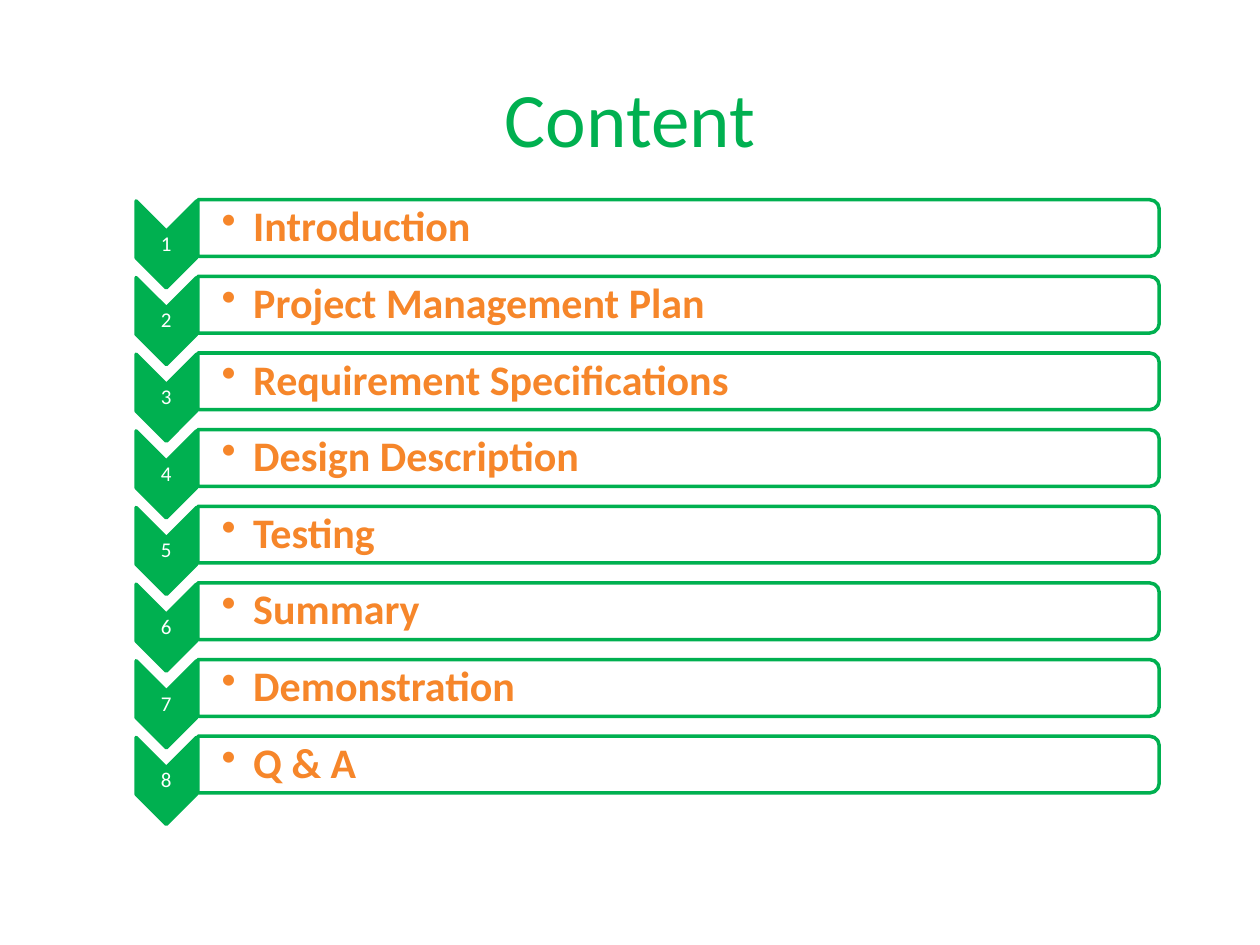
from lxml.etree import SubElement
from pptx import Presentation
from pptx.dml.color import RGBColor
from pptx.enum.shapes import MSO_SHAPE as Shape
from pptx.enum.text import MSO_ANCHOR as Anchor, PP_ALIGN as Align
from pptx.oxml.ns import qn
from pptx.util import Inches, Pt

# Content
TITLE = "Content"
TOPICS = [
    "Introduction",
    "Project Management Plan",
    "Requirement Specifications",
    "Design Description",
    "Testing",
    "Summary",
    "Demonstration",
    "Q & A",
]

GREEN = RGBColor(0x00, 0xB0, 0x50)
ORANGE = RGBColor(0xF6, 0x86, 0x2A)
WHITE = RGBColor(0xFF, 0xFF, 0xFF)
FONT = "Calibri"

# Grid, in inches: one row per topic, chevron column then bar column
SLIDE_W, SLIDE_H = 10, 7.5
ROW_PITCH = SLIDE_H * 0.0811
FIRST_BAR_Y = 1.81
CHEVRON_DROP = 0.13
CHEVRON_X, CHEVRON_W, CHEVRON_H = 1.32, 0.48, 0.69
BAR_LEFT, BAR_W, BAR_H = 1.57, 7.63, 0.45


def write(frame, text, size, color, bold=False, align=Align.LEFT,
          margin=None, left_margin=None, spacing=None, bullet=False):
    """Put one formatted paragraph in a text frame."""
    frame.word_wrap = True
    frame.vertical_anchor = Anchor.MIDDLE
    if margin is not None:
        frame.margin_top = frame.margin_bottom = frame.margin_right = Inches(margin)
        frame.margin_left = Inches(margin if left_margin is None else left_margin)
    frame.text = text
    line = frame.paragraphs[0]
    line.alignment = align
    if spacing:
        line.line_spacing = spacing
    if bullet:
        line.level = 1
        props = line._p.get_or_add_pPr()
        props.set("marL", str(Inches(0.25)))
        props.set("indent", str(-Inches(0.25)))
        SubElement(props, qn("a:buChar"), char="•")
    font = line.runs[0].font
    font.name, font.size, font.bold = FONT, Pt(size), bold
    font.color.rgb = color


def add_turned(slide, kind, center_x, center_y, width, height, fill):
    """Add a shape turned 90°; width and height are as seen on the slide."""
    shape = slide.shapes.add_shape(
        kind, Inches(center_x - height / 2), Inches(center_y - width / 2),
        Inches(height), Inches(width))
    shape.rotation = 90
    shape.shadow.inherit = False
    shape.fill.solid()
    shape.fill.fore_color.rgb = fill
    shape.line.color.rgb = GREEN
    shape.line.width = Pt(2)
    return shape


def add_label(slide, center_x, center_y, width, height, text, **style):
    box = slide.shapes.add_textbox(
        Inches(center_x - width / 2), Inches(center_y - height / 2),
        Inches(width), Inches(height))
    write(box.text_frame, text, **style)


def add_topic(slide, number, topic):
    bar_y = FIRST_BAR_Y + (number - 1) * ROW_PITCH
    chevron_y = bar_y + CHEVRON_DROP
    bar_x = BAR_LEFT + BAR_W / 2

    # Numbered chevron
    add_turned(slide, Shape.CHEVRON, CHEVRON_X, chevron_y,
               CHEVRON_W, CHEVRON_H, GREEN)
    add_label(slide, CHEVRON_X, chevron_y, CHEVRON_W, 0.21, str(number),
              size=12, color=WHITE, align=Align.CENTER, margin=0.01, spacing=0.9)

    # Topic bar, 90 % opaque
    bar = add_turned(slide, Shape.ROUND_2_SAME_RECTANGLE, bar_x, bar_y,
                     BAR_W, BAR_H, WHITE)
    fill_color = bar._element.spPr.find(qn("a:solidFill"))[0]
    SubElement(fill_color, qn("a:alpha"), val="90000")
    add_label(slide, bar_x, bar_y, BAR_W, 0.4, topic, size=24, color=ORANGE,
              bold=True, margin=0.02, left_margin=0.19, spacing=0.9, bullet=True)


def main():
    deck = Presentation()
    deck.slide_width, deck.slide_height = Inches(SLIDE_W), Inches(SLIDE_H)
    slide = deck.slides.add_slide(deck.slide_layouts[5])

    # Title
    title = slide.shapes.title
    title.left, title.top = Inches(0.5), Inches(0.3)
    title.width, title.height = Inches(9), Inches(1.25)
    write(title.text_frame, TITLE, size=44, color=GREEN, align=Align.CENTER)

    for number, topic in enumerate(TOPICS, start=1):
        add_topic(slide, number, topic)

    deck.save("out.pptx")


if __name__ == "__main__":
    main()
